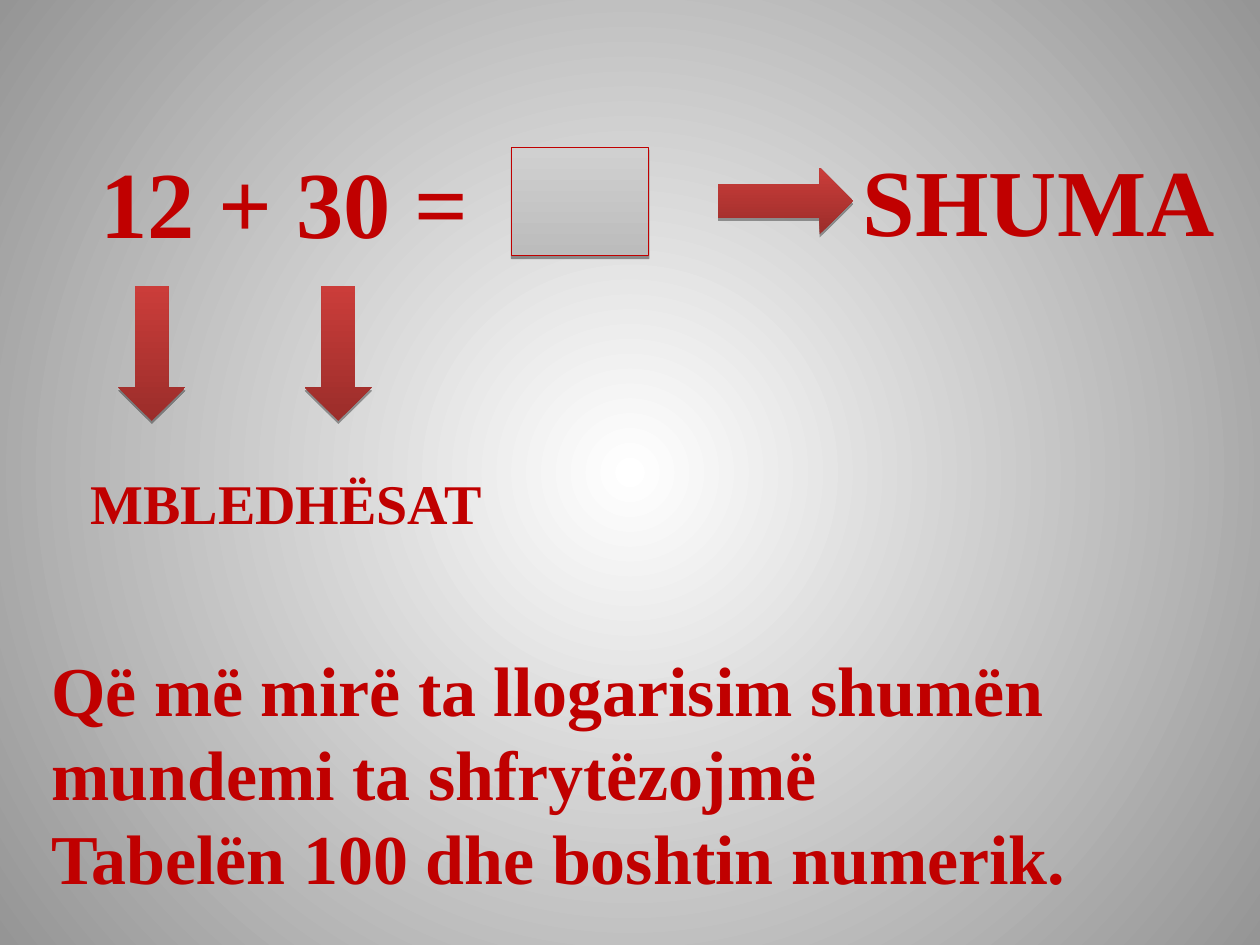
from lxml.etree import SubElement as Sub
from pptx import Presentation
from pptx.dml.color import RGBColor
from pptx.enum.shapes import MSO_SHAPE as Kind
from pptx.enum.text import MSO_AUTO_SIZE as Fit
from pptx.oxml.ns import qn
from pptx.util import Inches, Pt

RED = RGBColor(0xC0, 0x00, 0x00)
DEEP = RGBColor(0x9B, 0x2D, 0x2A)
WARM = RGBColor(0xCB, 0x3D, 0x3A)
GRAY = RGBColor(0xBC, 0xBC, 0xBC)
PALE = RGBColor(0xD0, 0xD0, 0xD0)
WHITE = RGBColor(0xFF, 0xFF, 0xFF)
EDGE = RGBColor(0x95, 0x95, 0x95)


class Board:
    """Holds the style and the current slide, placing parts on a grid of inch cells."""

    font = "Times New Roman"
    cols, rows = 10, 7.5

    def __init__(self):
        self.deck = Presentation()
        self.deck.slide_width = Inches(self.cols)
        self.deck.slide_height = Inches(self.rows)
        self.slide = self.deck.slides.add_slide(self.deck.slide_layouts[6])

    def cell(self, *at):
        wide = self.deck.slide_width / self.cols
        high = self.deck.slide_height / self.rows
        return [int(n * unit) for n, unit in zip(at, (wide, high) * 2)]

    def blend(self, fill, tones):
        fill.gradient()
        for stop, tone in zip(fill.gradient_stops, tones):
            stop.color.rgb = tone

    def glow(self, *tones):
        self.blend(self.slide.background.fill, tones)
        grad = self.slide.element.find(".//" + qn("a:gradFill"))
        grad.remove(grad.find(qn("a:lin")))
        ring = Sub(grad, qn("a:path"), path="circle")
        Sub(ring, qn("a:fillToRect"), dict.fromkeys("ltrb", "50000"))

    def shape(self, kind, at, tones, line=None, drop=1.8, dark=35):
        item = self.slide.shapes.add_shape(kind, *self.cell(*at))
        self.blend(item.fill, tones)
        item.fill.gradient_angle = 90
        if line is None:
            item.line.fill.background()
        else:
            item.line.color.rgb = line
            item.line.width = Pt(0.75)
        item.shadow.inherit = False
        glum = item.element.spPr.find(qn("a:effectLst"))
        cast = Sub(glum, qn("a:outerShdw"), blurRad="0", dist=str(Pt(drop)),
                   dir="5400000", rotWithShape="0")
        tint = Sub(cast, qn("a:srgbClr"), val="000000")
        Sub(tint, qn("a:alpha"), val=str(dark * 1000))

    def text(self, at, size, *lines, wrap=False):
        frame = self.slide.shapes.add_textbox(*self.cell(*at)).text_frame
        frame.word_wrap = wrap
        frame.auto_size = Fit.SHAPE_TO_FIT_TEXT
        for i, line in enumerate(lines):
            para = frame.add_paragraph() if i else frame.paragraphs[0]
            run = para.add_run()
            run.text = line
            run.font.name = self.font
            run.font.size = Pt(size)
            run.font.bold = True
            run.font.color.rgb = RED

    def save(self):
        self.deck.save("out.pptx")


def main():
    board = Board()
    board.glow(WHITE, EDGE)
    board.text((0.7, 1.09, 4.92, 1.02), 54, "12 + 30 =", wrap=True)
    board.shape(Kind.RECTANGLE, (4.06, 1.17, 1.09, 0.86), (GRAY, PALE),
                RED, 1.6, 38)
    board.shape(Kind.RIGHT_ARROW, (5.7, 1.33, 1.07, 0.53), (DEEP, WARM))
    board.text((6.75, 1.08, 3.02, 1.01), 54, "SHUMA")
    for left in (0.94, 2.42):
        board.shape(Kind.DOWN_ARROW, (left, 2.27, 0.53, 1.07), (DEEP, WARM))
    board.text((0.62, 3.67, 3.34, 0.64), 32, "MBLEDHËSAT")
    board.text((0.31, 5.08, 8.34, 2.12), 40,
               "Që më mirë ta llogarisim shumën",
               "mundemi ta shfrytëzojmë",
               "Tabelën 100 dhe boshtin numerik.")
    board.save()


if __name__ == "__main__":
    main()
